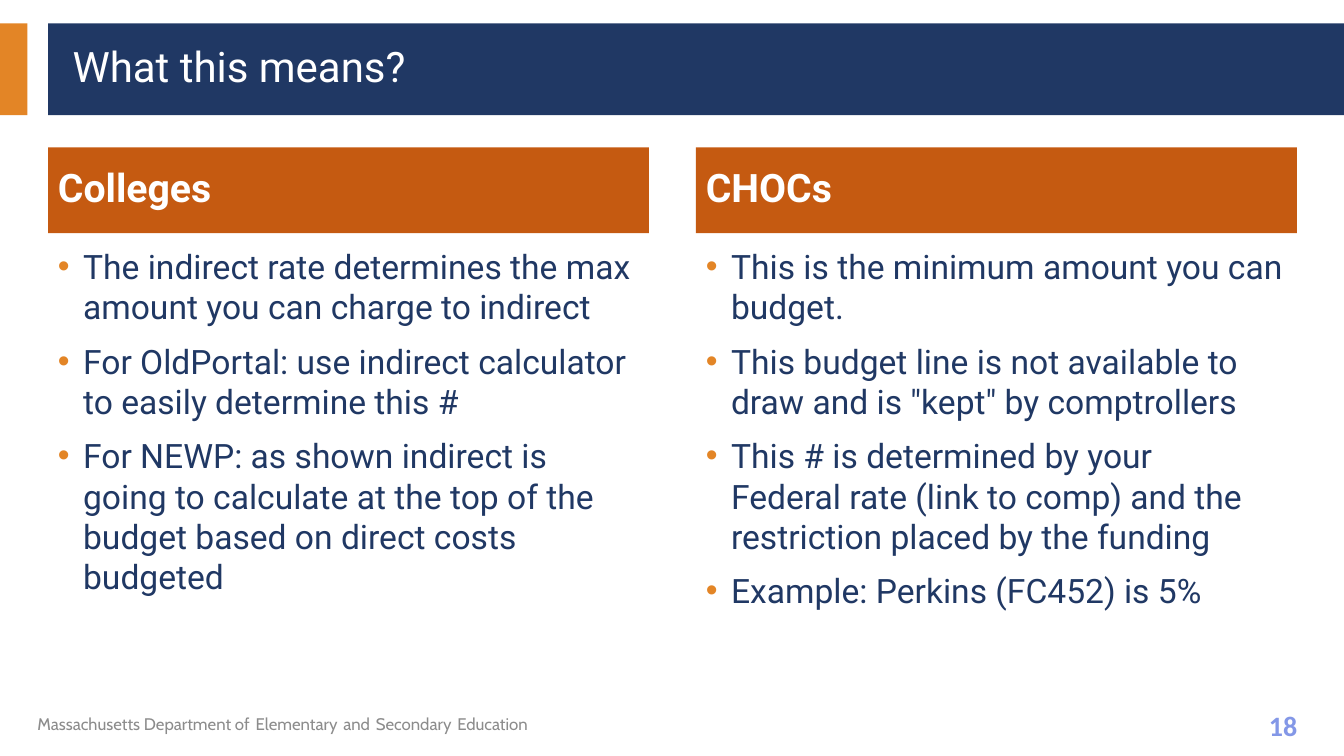
from lxml import etree
from pptx import Presentation
from pptx.dml.color import RGBColor
from pptx.enum.shapes import MSO_SHAPE
from pptx.enum.text import MSO_ANCHOR, PP_ALIGN
from pptx.oxml.ns import qn
from pptx.util import Pt

TITLE = "What this means?"
COLUMNS = [
    ("Colleges", [
        "The indirect rate determines the max amount you can charge to indirect",
        "For OldPortal: use indirect calculator to easily determine this #",
        "For NEWP: as shown indirect is going to calculate at the top of the budget "
        "based on direct costs budgeted",
    ]),
    ("CHOCs", [
        "This is the minimum amount you can budget.",
        'This budget line is not available to draw and is "kept" by comptrollers',
        "This # is determined by your Federal\u00a0rate (link to comp) and the "
        "restriction placed by the funding",
        "Example: Perkins (FC452) is 5%",
    ]),
]
FOOTER = ["Massachusetts Department of", "Elementary", "and", "Secondary", "Education"]
PAGE_NUMBER = "18"

NAVY, ORANGE, RUST, WHITE = "203864", "E38526", "C55A11", "FFFFFF"
TITLE_FONT = {"name": "Roboto", "size": Pt(30), "color": WHITE}
HEADING_FONT = {"name": "Roboto", "size": Pt(28), "color": WHITE, "bold": True}
BODY_FONT = {"name": "Roboto", "size": Pt(24), "color": NAVY}
FOOTER_FONT = {"name": "Cabin", "size": Pt(12), "color": "8C8C8C"}
GAP_FONT = {"name": "Cabin", "size": Pt(18), "color": "000000"}
NUMBER_FONT = {"name": "Calibri", "size": Pt(20), "color": "8397E7", "bold": True}

PAGE_WIDTH, PAGE_HEIGHT = 960, 540
LEFT, COLUMN_WIDTH, COLUMN_STEP = 34.3, 429.2, 462.8
BAND_TOP, BAND_HEIGHT = 16.7, 65.5
HEADING_TOP, HEADING_HEIGHT = 105.3, 61.2
BODY_TOP, BODY_HEIGHT = 172.1, 300


def paint(target, color):
    target.rgb = RGBColor.from_string(color)


def add_span(para, text, style):
    span = para.add_run()
    span.text = text
    for key, value in style.items():
        if key == "color":
            paint(span.font.color, value)
        else:
            setattr(span.font, key, value)


def add_bar(page, left, top, width, height, color):
    bar = page.shapes.add_shape(
        MSO_SHAPE.RECTANGLE, Pt(left), Pt(top), Pt(width), Pt(height))
    bar.shadow.inherit = False
    bar.fill.solid()
    paint(bar.fill.fore_color, color)
    bar.line.fill.background()
    return bar


def add_box(page, left, top, width, height):
    box = page.shapes.add_textbox(Pt(left), Pt(top), Pt(width), Pt(height))
    box.text_frame.word_wrap = True
    return box


def write_line(box, text, style):
    box.text_frame.vertical_anchor = MSO_ANCHOR.MIDDLE
    para = box.text_frame.paragraphs[0]
    para.alignment = PP_ALIGN.LEFT
    para.line_spacing = 0.9
    add_span(para, text, style)


def add_bullet(para):
    props = para._p.get_or_add_pPr()
    props.set("marL", str(Pt(18)))
    props.set("indent", str(-Pt(18)))
    color = etree.SubElement(props, qn("a:buClr"))
    etree.SubElement(color, qn("a:srgbClr"), val=ORANGE)
    etree.SubElement(props, qn("a:buFont"), typeface="Arial")
    etree.SubElement(props, qn("a:buChar"), char="•")


def write_bullets(box, items):
    for index, item in enumerate(items):
        frame = box.text_frame
        para = frame.add_paragraph() if index else frame.paragraphs[0]
        add_bullet(para)
        if index:
            para.space_before = Pt(10)
        add_span(para, item, BODY_FONT)


def main():
    deck = Presentation()
    deck.slide_width, deck.slide_height = Pt(PAGE_WIDTH), Pt(PAGE_HEIGHT)
    page = deck.slides.add_slide(deck.slide_layouts[6])

    add_bar(page, 0, BAND_TOP, 19.6, BAND_HEIGHT, ORANGE)
    add_bar(page, LEFT, BAND_TOP, PAGE_WIDTH - LEFT, BAND_HEIGHT, NAVY)
    write_line(add_box(page, 44.8, 22.8, 900, 53.4), TITLE, TITLE_FONT)

    for index, (heading, items) in enumerate(COLUMNS):
        left = LEFT + index * COLUMN_STEP
        bar = add_bar(page, left, HEADING_TOP, COLUMN_WIDTH, HEADING_HEIGHT, RUST)
        write_line(bar, heading, HEADING_FONT)
        write_bullets(add_box(page, left, BODY_TOP, COLUMN_WIDTH, BODY_HEIGHT), items)

    footer = add_box(page, 19.6, 500.4, 607.7, 29.1).text_frame.paragraphs[0]
    for index, words in enumerate(FOOTER):
        if index:
            add_span(footer, " ", GAP_FONT)
        add_span(footer, words, FOOTER_FONT)

    number = add_box(page, 894.2, 502.6, 44.6, 31.5).text_frame.paragraphs[0]
    number.alignment = PP_ALIGN.CENTER
    add_span(number, PAGE_NUMBER, NUMBER_FONT)

    deck.save("out.pptx")


if __name__ == "__main__":
    main()
